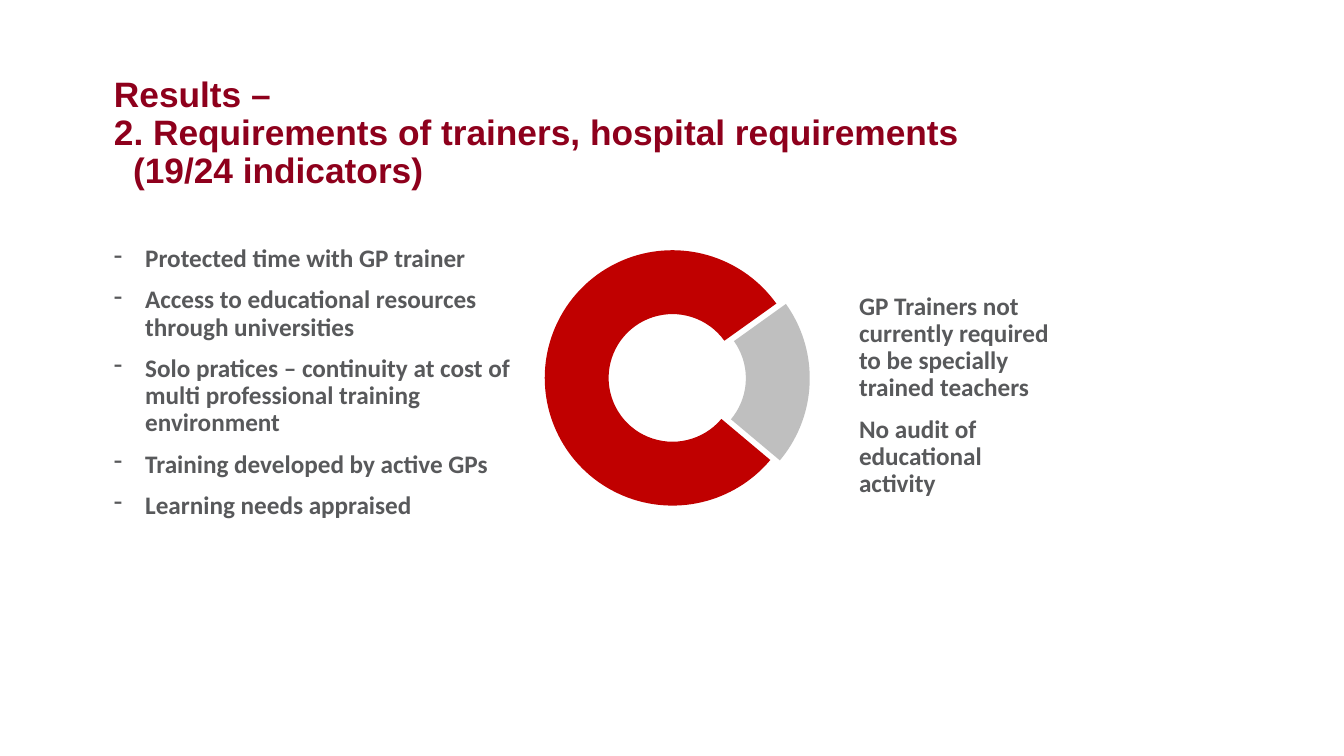
from dataclasses import dataclass

from lxml import etree
from pptx import Presentation
from pptx.chart.data import CategoryChartData
from pptx.dml.color import RGBColor
from pptx.enum.chart import XL_CHART_TYPE as ChartType
from pptx.enum.text import MSO_ANCHOR as Anchor, MSO_AUTO_SIZE as AutoSize, PP_ALIGN as Align
from pptx.oxml.ns import qn
from pptx.util import Inches, Pt


@dataclass(frozen=True)
class Theme:
    title_font: str = "Arial"
    body_font: str = "Calibri"
    title_size: float = 25.2
    body_size: float = 18
    chart_size: float = 10
    title_color: str = "8E001C"
    body_color: str = "58595B"
    chart_color: str = "000000"
    met_color: str = "C00000"
    unmet_color: str = "BFBFBF"
    line_spacing: float = 0.9
    paragraph_gap: float = 10


class ResultsSlide:
    def __init__(self, prs, theme):
        self.theme = theme
        self.slide = prs.slides.add_slide(prs.slide_layouts[5])

    def frame(self, shape, box):
        """Place a shape and return its text frame, without insets and set to wrap."""
        shape.left, shape.top, shape.width, shape.height = map(Inches, box)
        frame = shape.text_frame
        frame.margin_left = frame.margin_top = frame.margin_right = frame.margin_bottom = 0
        frame.word_wrap = True
        frame.auto_size = AutoSize.NONE
        frame.vertical_anchor = Anchor.TOP
        return frame

    def paragraph(self, frame, index, gap=0):
        paragraph = frame.paragraphs[0] if index == 0 else frame.add_paragraph()
        paragraph.alignment = Align.LEFT
        paragraph.line_spacing = self.theme.line_spacing
        paragraph.space_before = Pt(gap if index else 0)
        return paragraph

    def run(self, paragraph, text, font, size, color):
        run = paragraph.add_run()
        run.text = text
        run.font.name = font
        run.font.size = Pt(size)
        run.font.bold = True
        run.font.color.rgb = RGBColor.from_string(color)

    def indent(self, paragraph, left, first=0):
        properties = paragraph._p.get_or_add_pPr()
        properties.set("marL", str(Inches(left)))
        properties.set("indent", str(Inches(first)))
        return properties

    def title(self, lines, box):
        """Set the title from (text, indent) lines."""
        theme = self.theme
        frame = self.frame(self.slide.shapes.title, box)
        for index, (text, left) in enumerate(lines):
            paragraph = self.paragraph(frame, index)
            self.indent(paragraph, left)
            self.run(paragraph, text, theme.title_font, theme.title_size, theme.title_color)

    def text(self, items, box, bullet=None):
        theme = self.theme
        frame = self.frame(self.slide.shapes.add_textbox(0, 0, 0, 0), box)
        for index, item in enumerate(items):
            paragraph = self.paragraph(frame, index, theme.paragraph_gap)
            if bullet:
                properties = self.indent(paragraph, 0.31, -0.31)
                etree.SubElement(properties, qn("a:buFontTx"))
                etree.SubElement(properties, qn("a:buChar")).set("char", bullet)
            self.run(paragraph, item, theme.body_font, theme.body_size, theme.body_color)

    def doughnut(self, shares, box, start_angle, hole, explosion):
        """Draw (category, value, colour) shares and pull out the last one."""
        theme = self.theme
        data = CategoryChartData()
        data.categories = [category for category, _, _ in shares]
        data.add_series("Series 1", [value for _, value, _ in shares])
        chart = self.slide.shapes.add_chart(ChartType.DOUGHNUT, *map(Inches, box), data).chart
        chart.has_legend = chart.has_title = False
        chart.font.name = theme.body_font
        chart.font.size = Pt(theme.chart_size)
        chart.font.color.rgb = RGBColor.from_string(theme.chart_color)
        plot = chart.plots[0]
        plot.vary_by_categories = True
        for tag, value in (("c:firstSliceAng", start_angle), ("c:holeSize", hole)):
            plot._element.find(qn(tag)).set("val", str(value))
        for index, (_, _, color) in enumerate(shares):
            point = plot.series[0].points[index]
            point.format.fill.solid()
            point.format.fill.fore_color.rgb = RGBColor.from_string(color)
            point.format.line.fill.background()
        pulled_out = plot.series[0]._element.findall(qn("c:dPt"))[-1]
        offset = etree.Element(qn("c:explosion"), val=str(explosion))
        pulled_out.find(qn("c:spPr")).addprevious(offset)


def main():
    prs = Presentation()
    prs.slide_width, prs.slide_height = Inches(13.33), Inches(7.5)
    theme = Theme()
    results = ResultsSlide(prs, theme)
    results.title(
        [
            ("Results –", 0),
            ("2. Requirements of trainers, hospital requirements", 0),
            ("(19/24 indicators)", 0.19),
        ],
        (1.13, 0.76, 11.5, 1.13),
    )
    results.text(
        [
            "Protected time with GP trainer",
            "Access to educational resources through universities",
            "Solo pratices – continuity at cost of multi professional training environment",
            "Training developed by active GPs",
            "Learning needs appraised",
        ],
        (1.13, 2.44, 3.99, 4.91),
        bullet="-",
    )
    results.text(
        [
            "GP Trainers not currently required to be specially trained teachers",
            "No audit of educational activity",
        ],
        (8.52, 2.91, 1.99, 3.95),
    )
    results.doughnut(
        [("1", 79, theme.met_color), ("2", 21, theme.unmet_color)],
        (4.17, 2.25, 5, 3),
        start_angle=130,
        hole=50,
        explosion=15,
    )
    prs.save("out.pptx")


if __name__ == "__main__":
    main()
